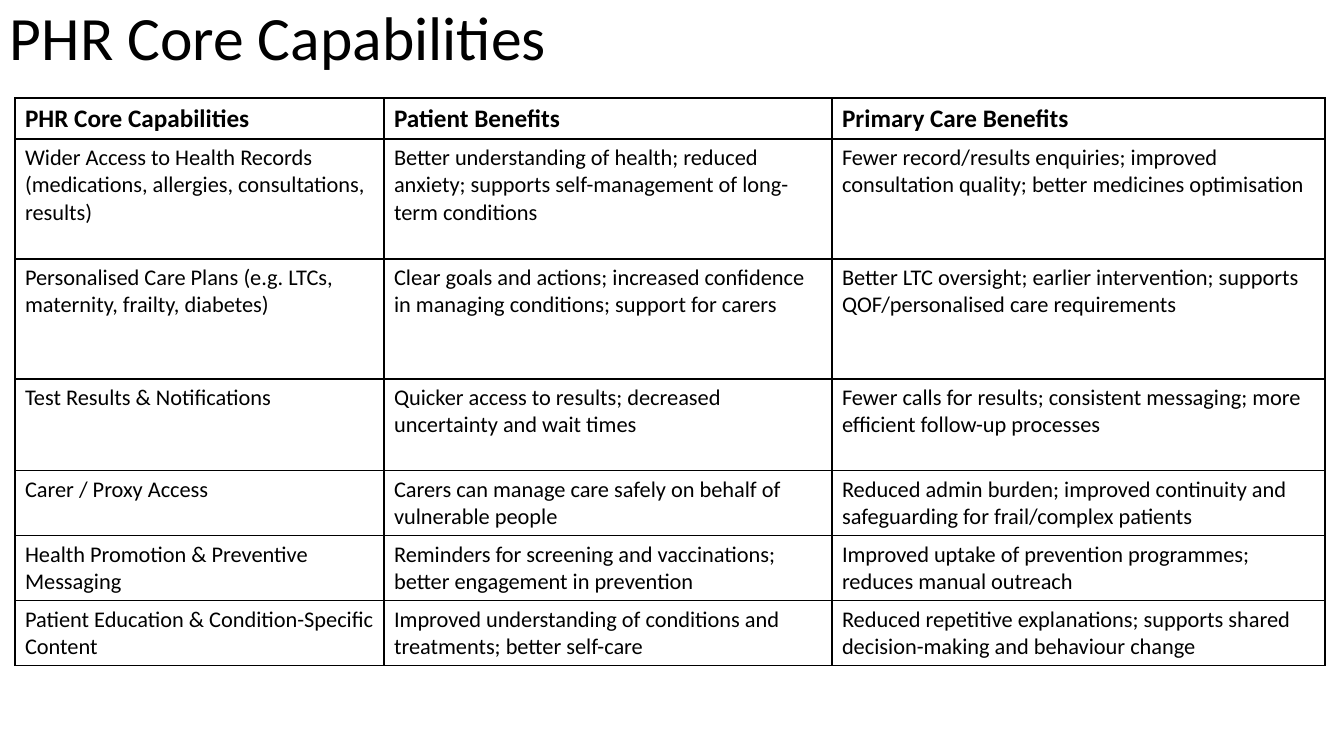
from lxml.etree import SubElement
from pptx import Presentation
from pptx.dml.color import RGBColor
from pptx.enum.text import MSO_ANCHOR
from pptx.oxml.ns import qn
from pptx.util import Emu, Pt

SLIDE_WIDTH, SLIDE_HEIGHT = 1344, 756
EMU_PER_PX = 12192000 / SLIDE_WIDTH
FONT = "Calibri"
COLORS = {"text": "000000", "border": "000000"}
COLUMN_WIDTHS = [369, 448, 493]
ROW_HEIGHTS = [41, 120, 120, 92, 65, 65, 65]
CAPABILITIES = [
    ("PHR Core Capabilities", "Patient Benefits", "Primary Care Benefits"),
    ("Wider Access to Health Records (medications, allergies, consultations, results)",
     "Better understanding of health; reduced anxiety; supports self-management of long-term conditions",
     "Fewer record/results enquiries; improved consultation quality; better medicines optimisation"),
    ("Personalised Care Plans (e.g. LTCs, maternity, frailty, diabetes)",
     "Clear goals and actions; increased confidence in managing conditions; support for carers",
     "Better LTC oversight; earlier intervention; supports QOF/personalised care requirements"),
    ("Test Results & Notifications",
     "Quicker access to results; decreased uncertainty and wait times",
     "Fewer calls for results; consistent messaging; more efficient follow-up processes"),
    ("Carer / Proxy Access",
     "Carers can manage care safely on behalf of vulnerable people",
     "Reduced admin burden; improved continuity and safeguarding for frail/complex patients"),
    ("Health Promotion & Preventive Messaging",
     "Reminders for screening and vaccinations; better engagement in prevention",
     "Improved uptake of prevention programmes; reduces manual outreach"),
    ("Patient Education & Condition-Specific Content",
     "Improved understanding of conditions and treatments; better self-care",
     "Reduced repetitive explanations; supports shared decision-making and behaviour change"),
]


def px(length):
    return Emu(round(length * EMU_PER_PX))


def add_span(para, text, size, bold=False):
    span = para.add_run()
    span.text = text
    span.font.name = FONT
    span.font.size = Pt(size)
    span.font.bold = bold
    span.font.color.rgb = RGBColor.from_string(COLORS["text"])


def add_title(page, left, top, width, height):
    box = page.shapes.add_textbox(px(left), px(top), px(width), px(height))
    frame = box.text_frame
    frame.word_wrap = True
    frame.vertical_anchor = MSO_ANCHOR.MIDDLE
    para = frame.paragraphs[0]
    para.line_spacing = 0.9
    add_span(para, "PHR Core Capabilities", 44)


def set_borders(cell):
    """Draw a 1 pt line on all four sides; call before setting the fill."""
    properties = cell._tc.get_or_add_tcPr()
    for side in ("lnL", "lnR", "lnT", "lnB"):
        line = SubElement(properties, qn(f"a:{side}"), w=str(Pt(1)))
        fill = SubElement(line, qn("a:solidFill"))
        SubElement(fill, qn("a:srgbClr"), val=COLORS["border"])


def add_capability_table(page, left, top):
    frame = page.shapes.add_table(
        len(ROW_HEIGHTS), len(COLUMN_WIDTHS), px(left), px(top),
        px(sum(COLUMN_WIDTHS)), px(sum(ROW_HEIGHTS)))
    table = frame.table
    table.horz_banding = False
    for column, width in zip(table.columns, COLUMN_WIDTHS):
        column.width = px(width)
    for index, (row, height) in enumerate(zip(table.rows, ROW_HEIGHTS)):
        row.height = px(height)
        is_header = index == 0
        for cell, text in zip(row.cells, CAPABILITIES[index]):
            set_borders(cell)
            cell.fill.background()
            cell.vertical_anchor = MSO_ANCHOR.TOP
            add_span(cell.text_frame.paragraphs[0], text,
                     18 if is_header else 16, is_header)


def main():
    deck = Presentation()
    deck.slide_width, deck.slide_height = px(SLIDE_WIDTH), px(SLIDE_HEIGHT)
    page = deck.slides.add_slide(deck.slide_layouts[6])
    add_title(page, 0, 0, 1159, 81)
    add_capability_table(page, 15, 98)
    deck.save("out.pptx")


if __name__ == "__main__":
    main()
